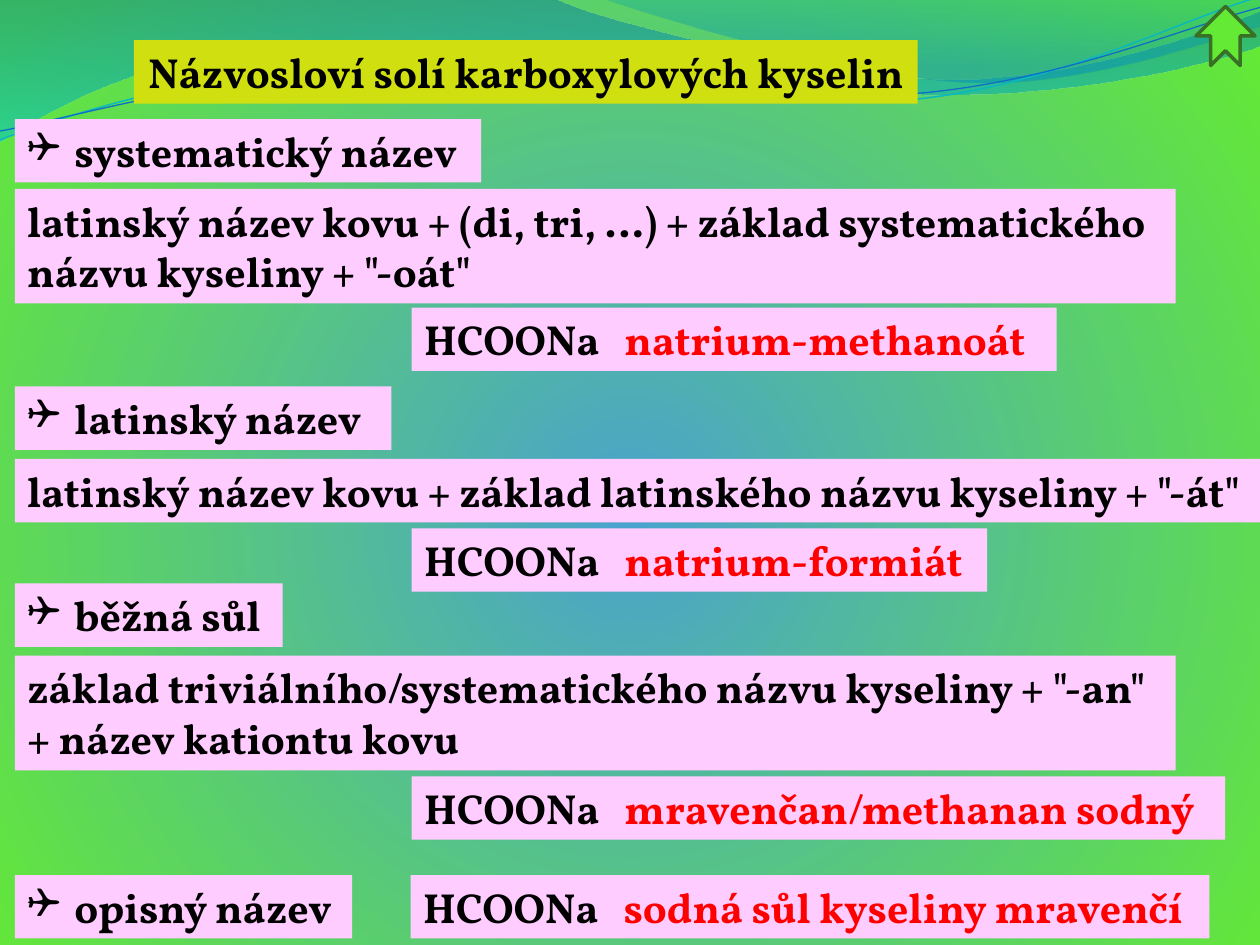
import math

from pptx import Presentation
from pptx import util as u
from pptx.dml.color import RGBColor
from pptx.enum import shapes, text
from pptx.oxml import parse_xml
from pptx.oxml.ns import nsdecls, qn

COLORS = {
    "pink": "FFCCFF", "title": "D0DF0F", "ink": "000000", "name": "FF0000",
    "green": "64E935", "blue": "4AA2CE", "arrow_line": "387026",
    "deep_blue": "0074A1", "cyan": "00C6CF", "teal": "00A1A9",
    "sea": "008BBF", "thin_cyan": "0AB8BF", "thin_blue": "0F6FC6",
}
FONT = "Vollkorn"
LINE_HEIGHT, TWO_LINES = 1.28, 2.31
LEFT = 0.3
UNITS_PER_INCH = 1000
SCALE = u.Cm(2.54) / UNITS_PER_INCH

presentation = Presentation()
presentation.slide_width = u.Cm(25.4)
presentation.slide_height = u.Cm(19.05)
slide = presentation.slides.add_slide(presentation.slide_layouts[6])


def set_gradient(properties, stops, direction):
    stop_xml = "".join(
        f'<a:gs pos="{position * 1000}"><a:srgbClr val="{COLORS[color]}">'
        f'<a:alpha val="{alpha * 1000}"/></a:srgbClr></a:gs>'
        for position, color, alpha in stops)
    gradient = parse_xml(f'<a:gradFill {nsdecls("a")} rotWithShape="1">'
                         f"<a:gsLst>{stop_xml}</a:gsLst>{direction}</a:gradFill>")
    properties.replace(properties.find(qn("a:solidFill")), gradient)


def add_label(content, left, top, width, height=LINE_HEIGHT, fill="pink",
              align=text.PP_ALIGN.LEFT, bullet=False, tab=None):
    shape = slide.shapes.add_textbox(u.Cm(left), u.Cm(top), u.Cm(width), u.Cm(height))
    shape.fill.solid()
    shape.fill.fore_color.rgb = RGBColor.from_string(COLORS[fill])
    frame = shape.text_frame
    frame.word_wrap = True
    frame.auto_size = text.MSO_AUTO_SIZE.SHAPE_TO_FIT_TEXT
    paragraph = frame.paragraphs[0]
    paragraph.alignment = align
    properties = paragraph._p.get_or_add_pPr()
    if bullet:
        properties.set("marL", str(u.Cm(0.95)))
        properties.set("indent", str(-u.Cm(0.95)))
        properties.append(parse_xml(f'<a:buFont {nsdecls("a")} typeface="Wingdings" charset="2"/>'))
        properties.append(parse_xml(f'<a:buChar {nsdecls("a")} char="❑"/>'))
    if tab:
        properties.append(parse_xml(f'<a:tabLst {nsdecls("a")}>'
                                    f'<a:tab pos="{u.Cm(tab)}" algn="l"/></a:tabLst>'))
    for number, part in enumerate(content.split("|")):
        for line_number, line in enumerate(part.split("\n")):
            if line_number:
                paragraph.add_line_break()
            run = paragraph.add_run()
            run.text = line
            run.font.name = FONT
            run.font.size = u.Pt(24)
            run.font.bold = True
            run.font.color.rgb = RGBColor.from_string(COLORS["name" if number else "ink"])


slide.background.fill.solid()
set_gradient(slide._element.find(".//" + qn("p:bgPr")),
             [(0, "blue", 100), (100, "green", 100)],
             '<a:path path="circle"><a:fillToRect l="50000" t="55000" r="50000" b="45000"/></a:path>')

wide_wave = [(0, 0), (4.4, -0.01), (4.76, 0.17, 6.64, 0.63, 7.58, 0.63),
             (8.53, 0.63, 9.58, 0.26, 10, 0.09), (10.01, 0.36),
             (9.83, 0.44, 8.7, 0.76, 7.46, 0.75), (6.22, 0.75, 3.82, 0.28, 2.57, 0.34),
             (1.29, 0.36, 0.46, 0.83, -0.01, 1.13)]
right_wave = [(4.79, -0.01), (5.09, 0.11, 6.82, 0.62, 7.69, 0.65),
              (8.56, 0.69, 9.61, 0.32, 10, 0.21), (10, 0)]
upper_line = [(0, 1.11), (0.48, 0.93, 1.58, 0.57, 2.77, 0.52),
              (3.95, 0.47, 5.93, 0.89, 7.13, 0.8), (8.33, 0.71, 9.38, 0.15, 9.98, -0.02)]
lower_line = [(0, 1.04), (0.47, 0.96, 1.64, 0.61, 2.83, 0.56),
              (4.03, 0.51, 5.97, 0.84, 7.17, 0.75), (8.36, 0.67, 9.41, 0.21, 10, 0.06)]

for segments, stops, line_color, line_width, tilt, middle in [
    (wide_wave, [(0, "deep_blue", 45), (100, "cyan", 55)], None, 0, 0, 0),
    (right_wave, [(0, "teal", 30), (80, "sea", 45)], None, 0, 0, 0),
    (upper_line, None, "thin_cyan", 0.85, 2.7, 0.57),
    (lower_line, None, "thin_blue", 0.75, 2.7, 0.59),
]:
    cosine, sine = math.cos(math.radians(tilt)), math.sin(math.radians(tilt))
    center = 5 if tilt else 0
    curves = []
    for segment in segments:
        offsets = [(x - center, y - middle) for x, y in zip(segment[::2], segment[1::2])]
        curves.append([(round((center + x * cosine - y * sine) * UNITS_PER_INCH),
                        round((middle + x * sine + y * cosine) * UNITS_PER_INCH))
                       for x, y in offsets])
    ends = [curve[-1] for curve in curves]
    builder = slide.shapes.build_freeform(*ends[0], scale=SCALE)
    builder.add_line_segments(ends[1:], close=stops is not None)
    shape = builder.convert_to_shape()
    left, top = (min(values) for values in zip(*ends))
    for line, curve in zip(list(shape._element.iter(qn("a:lnTo"))), curves[1:]):
        if len(curve) == 3:
            point_xml = "".join(f'<a:pt x="{x - left}" y="{y - top}"/>' for x, y in curve)
            line.getparent().replace(line, parse_xml(
                f'<a:cubicBezTo {nsdecls("a")}>{point_xml}</a:cubicBezTo>'))
    shape.rotation = -tilt
    shape.shadow.inherit = False
    if stops:
        shape.fill.solid()
        set_gradient(shape._element.spPr, stops, '<a:lin ang="5400000" scaled="1"/>')
        shape.line.fill.background()
    else:
        shape.fill.background()
        shape.line.color.rgb = RGBColor.from_string(COLORS[line_color])
        shape.line.width = u.Pt(line_width)

for heading, top, width in [
    ("systematický název", 2.4, 9.4),
    ("latinský název", 7.79, 7.59),
    ("běžná sůl", 11.76, 5.4),
    ("opisný název", 17.64, 6.8),
]:
    add_label(heading, LEFT, top, width, bullet=True)

add_label("Názvosloví solí karboxylových kyselin", 2.7, 0.81, 15.8,
          fill="title", align=text.PP_ALIGN.CENTER)

for rule, top, width, height in [
    ('latinský název kovu + (di, tri, …) + základ systematického názvu kyseliny + "-oát"',
     3.81, 23.4, TWO_LINES),
    ('latinský název kovu + základ latinského názvu kyseliny + "-át"', 9.25, 25.1, LINE_HEIGHT),
    ('základ triviálního/systematického názvu kyseliny + "-an"\n+ název kationtu kovu',
     13.22, 23.4, TWO_LINES),
]:
    add_label(rule, LEFT, top, width, height)

for salt_name, left, top, width in [
    ("natrium-methanoát", 8.3, 6.2, 13),
    ("natrium-formiát", 8.3, 10.65, 11.6),
    ("mravenčan/methanan sodný", 8.3, 15.65, 16.4),
    ("sodná sůl kyseliny mravenčí", 8.28, 17.64, 16.1),
]:
    add_label(f"HCOONa\t|{salt_name}", left, top, width, tab=4.04)

arrow = slide.shapes.add_shape(shapes.MSO_SHAPE.NOTCHED_RIGHT_ARROW,
                               u.Cm(24.11), u.Cm(0.13), u.Cm(1.19), u.Cm(1.19))
arrow.rotation = 270
arrow.shadow.inherit = False
arrow.fill.solid()
arrow.fill.fore_color.rgb = RGBColor.from_string(COLORS["green"])
arrow.line.color.rgb = RGBColor.from_string(COLORS["arrow_line"])
arrow.line.width = u.Pt(2)

presentation.save("out.pptx")
